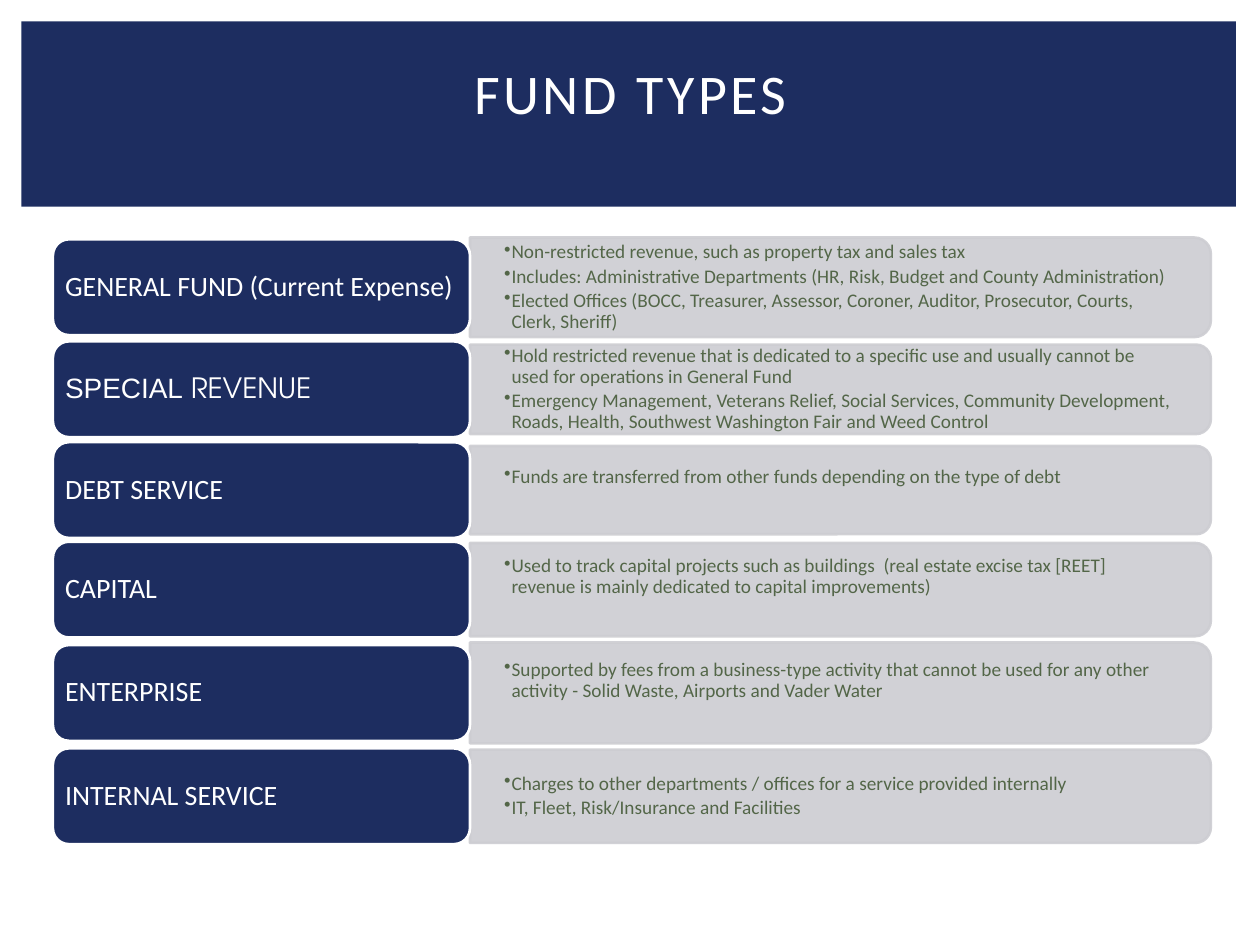
import pptx
import pptx.util
import pptx.dml.color
import pptx.enum.shapes
import pptx.enum.text
import pptx.oxml.ns
import lxml.etree

Pt = pptx.util.Pt
kinds = pptx.enum.shapes.MSO_SHAPE
align = pptx.enum.text.PP_ALIGN
mid = pptx.enum.text.MSO_ANCHOR.MIDDLE
qn = pptx.oxml.ns.qn

hues = {"navy": "1D2D60", "gray": "CDCDD2", "green": "536648", "white": "FFFFFF"}
rgb = {name: pptx.dml.color.RGBColor.from_string(hue) for name, hue in hues.items()}

deck = pptx.Presentation()
deck.slide_width = pptx.util.Inches(10)
deck.slide_height = pptx.util.Inches(7.5)
col = deck.slide_width / 100
row = deck.slide_height / 75
slide = deck.slides.add_slide(deck.slide_layouts[6])


def place(kind, left, top, wide, high, fill, line=None):
    box = [round(n) for n in (left * col, top * row, wide * col, high * row)]
    if kind is None:
        shape = slide.shapes.add_textbox(*box)
    else:
        shape = slide.shapes.add_shape(kind, *box)
        shape.shadow.inherit = False
        shape.fill.solid()
        shape.fill.fore_color.rgb = rgb[fill]
        if line:
            shape.line.color.rgb = rgb[line]
            shape.line.width = Pt(1.5)
        else:
            shape.line.fill.background()
    frame = shape.text_frame
    frame.word_wrap = True
    frame.vertical_anchor = mid
    frame.margin_top = frame.margin_bottom = 0
    return shape


def style(run, size, hue, face="Calibri"):
    run.font.size = Pt(size)
    run.font.name = face
    run.font.color.rgb = rgb[hue]


place(kinds.RECTANGLE, 1.7, 1.7, 96.4, 14.7, "navy")

title = place(None, 4.2, 3.9, 91.7, 6.8, None)
head = title.text_frame.paragraphs[0]
head.text = "FUND TYPES"
head.alignment = align.CENTER
style(head.runs[0], 32, "white")
head.runs[0].font._element.set("spc", "200")

funds = [
    (22.8, 7.9, 0, [("GENERAL FUND (Current Expense)", "Calibri")], [
        "Non-restricted revenue, such as property tax and sales tax",
        "Includes: Administrative Departments (HR, Risk, Budget and County Administration)",
        "Elected Offices (BOCC, Treasurer, Assessor, Coroner, Auditor, Prosecutor, Courts, Clerk, Sheriff)",
    ]),
    (30.9, 7.1, 0, [("SPECIAL", "Arial"), (" REVENUE", "TeX Gyre Adventor")], [
        "Hold restricted revenue that is dedicated to a specific use and usually cannot be used for operations in General Fund",
        "Emergency Management, Veterans Relief, Social Services, Community Development, Roads, Health, Southwest Washington Fair and Weed Control",
    ]),
    (38.9, 7, 1, [("DEBT SERVICE", "Calibri")], [
        "Funds are transferred from other funds depending on the type of debt",
    ]),
    (46.8, 7.4, 1, [("CAPITAL", "Calibri")], [
        "Used to track capital projects such as buildings  (real estate excise tax [REET] revenue is mainly dedicated to capital improvements)",
    ]),
    (55, 8, 1, [("ENTERPRISE", "Calibri")], [
        "Supported by fees from a business-type activity that cannot be used for any other activity - Solid Waste, Airports and Vader Water",
    ]),
    (63.2, 7.4, 0, [("INTERNAL SERVICE", "Calibri")], [
        "Charges to other departments / offices for a service provided internally",
        "IT, Fleet, Risk/Insurance and Facilities",
    ]),
]
left, wide, high = 4.2, 33.1, 7.6
edge, span = left + wide, 58.8

for y, deep, lift, label, notes in funds:
    bar = place(kinds.ROUND_2_SAME_RECTANGLE, edge + (span - deep) / 2, y - span / 2,
                deep, span, "gray", "gray")
    bar.rotation = 90
    for tint in bar._element.spPr.iter(qn("a:srgbClr")):
        lxml.etree.SubElement(tint, qn("a:alpha"), val="90000")

    text = place(None, edge, y - deep / 2 - lift, span - 0.3, deep, None).text_frame
    text.margin_left = text.margin_right = round(2.7 * col)
    for i, note in enumerate(notes):
        para = text.add_paragraph() if i else text.paragraphs[0]
        para.text = note
        para.line_spacing = 0.9
        para.space_after = Pt(2)
        props = para._p.get_or_add_pPr()
        props.set("marL", str(round(0.6 * col)))
        props.set("indent", str(round(-0.6 * col)))
        lxml.etree.SubElement(props, qn("a:buChar"), char="•")
        style(para.runs[0], 11, "green")

    tab = place(kinds.ROUNDED_RECTANGLE, left, y - high / 2, wide, high, "navy", "white")
    tab.text_frame.margin_left = round(0.6 * col)
    tab.text_frame.margin_right = 0
    para = tab.text_frame.paragraphs[0]
    para.alignment = align.LEFT
    para.line_spacing = 0.9
    for word, face in label:
        run = para.add_run()
        run.text = word
        style(run, 16, "white", face)

deck.save("out.pptx")
